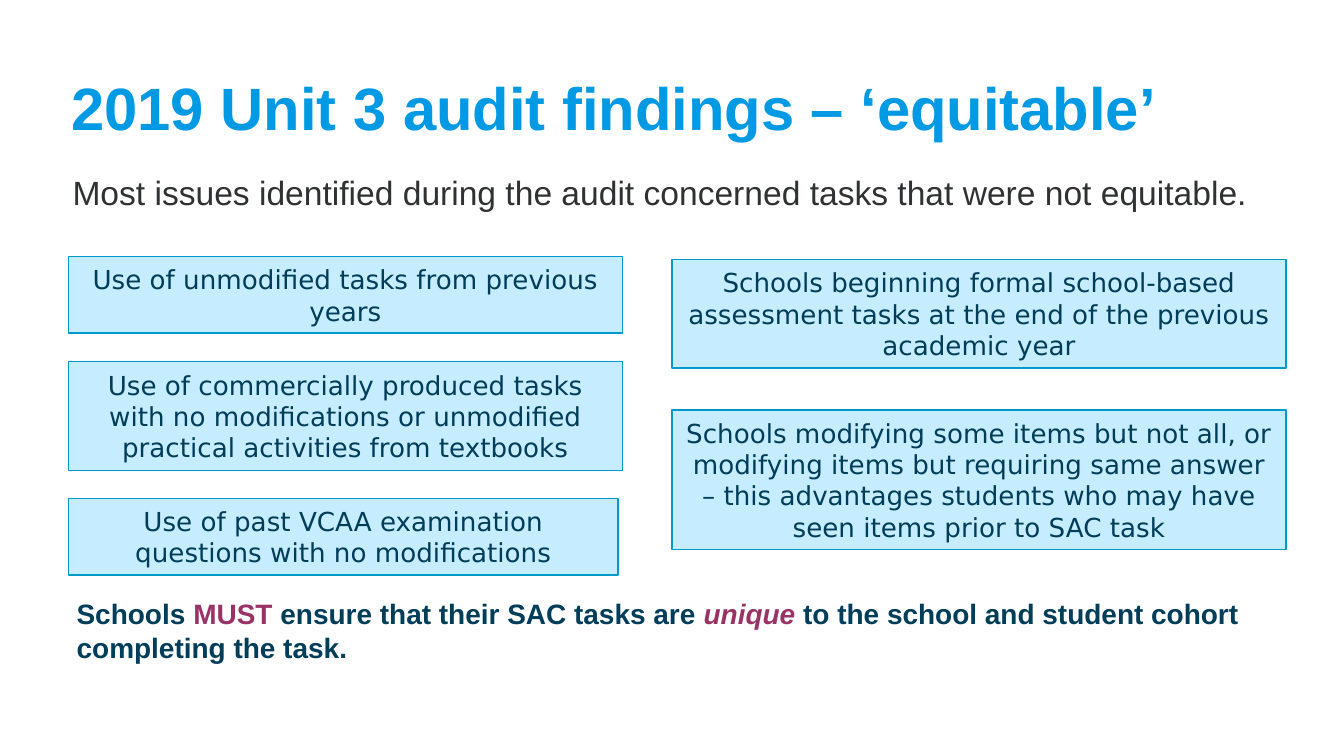
from pptx import Presentation
from pptx.dml.color import RGBColor
from pptx.enum import shapes, text
from pptx.oxml import ns
from pptx.util import Inches, Pt
from lxml import etree

BLUE = RGBColor(0x00, 0x99, 0xE3)
CHARCOAL = RGBColor(0x30, 0x31, 0x32)
NAVY = RGBColor(0x00, 0x3D, 0x59)
PLUM = RGBColor(0x99, 0x33, 0x66)
PALE_BLUE = RGBColor(0xC6, 0xEC, 0xFF)
EDGE_BLUE = RGBColor(0x00, 0x99, 0xCC)

LEFT_CARDS = [
    (2.69, 4.12, 0.81, "Use of commercially produced tasks with no modifications "
                       "or unmodified practical activities from textbooks"),
    (1.91, 4.12, 0.57, "Use of unmodified tasks from previous years"),
    (3.71, 4.09, 0.57, "Use of past VCAA examination questions with no modifications"),
]
RIGHT_CARDS = [
    (1.93, 4.57, 0.81, "Schools beginning formal school-based assessment tasks "
                       "at the end of the previous academic year"),
    (3.05, 4.57, 1.04, "Schools modifying some items but not all, or modifying items "
                       "but requiring same answer – this advantages students who may "
                       "have seen items prior to SAC task"),
]
REMINDER = [
    ("Schools ", NAVY, False),
    ("MUST", PLUM, False),
    (" ensure that their SAC tasks are ", NAVY, False),
    ("unique", PLUM, True),
    (" to the school and student cohort completing the task.", NAVY, False),
]


class AuditSlide:
    """Builds the audit findings slide in one consistent style."""

    def __init__(self, deck, layout):
        self.page = deck.slides.add_slide(layout)
        self.heading_font = "Arial"
        self.card_font = "DejaVu Sans"

    def style(self, span, name, size, color, bold=False, italic=False):
        font = span.font
        font.name, font.size = name, Pt(size)
        font.bold, font.italic = bold, italic
        font.color.rgb = color

    def place(self, box, left, top, width, height):
        box.left, box.top = Inches(left), Inches(top)
        box.width, box.height = Inches(width), Inches(height)

    def indent(self, para):
        properties = para._p.get_or_add_pPr()
        properties.set("marL", str(Inches(0.38)))
        properties.set("indent", "0")
        etree.SubElement(properties, ns.qn("a:buNone"))

    def title(self, words):
        box = self.page.shapes.title
        self.place(box, 0.43, 0.32, 9.13, 0.94)
        frame = box.text_frame
        frame.text = words
        frame.vertical_anchor = text.MSO_ANCHOR.MIDDLE
        frame.auto_size = text.MSO_AUTO_SIZE.NONE
        para = frame.paragraphs[0]
        para.alignment = text.PP_ALIGN.LEFT
        self.style(para.runs[0], self.heading_font, 32, BLUE, bold=True)

    def body(self, words):
        box = self.page.placeholders[1]
        self.place(box, 0.06, 1.23, 9.45, 0.57)
        frame = box.text_frame
        frame.text = words
        frame.auto_size = text.MSO_AUTO_SIZE.NONE
        para = frame.paragraphs[0]
        self.indent(para)
        para.space_before = Pt(0)
        self.style(para.runs[0], self.heading_font, 18, CHARCOAL)

    def card(self, left, top, width, height, words):
        box = self.page.shapes.add_shape(
            shapes.MSO_SHAPE.RECTANGLE,
            Inches(left), Inches(top), Inches(width), Inches(height))
        box.shadow.inherit = False
        box.fill.solid()
        box.fill.fore_color.rgb = PALE_BLUE
        box.line.color.rgb = EDGE_BLUE
        box.line.width = Pt(0.75)
        frame = box.text_frame
        frame.text = words
        frame.word_wrap = True
        frame.auto_size = text.MSO_AUTO_SIZE.SHAPE_TO_FIT_TEXT
        para = frame.paragraphs[0]
        para.alignment = text.PP_ALIGN.CENTER
        self.style(para.runs[0], self.card_font, 14, NAVY)

    def reminder(self, pieces):
        box = self.page.shapes.add_textbox(
            Inches(0.12), Inches(4.4), Inches(9.45), Inches(0.73))
        frame = box.text_frame
        frame.word_wrap = True
        frame.margin_left = frame.margin_right = Inches(0.07)
        frame.margin_top = frame.margin_bottom = Inches(0.04)
        para = frame.paragraphs[0]
        self.indent(para)
        for words, color, italic in pieces:
            span = para.add_run()
            span.text = words
            self.style(span, self.heading_font, 15, color, True, italic)


def main():
    deck = Presentation()
    deck.slide_width, deck.slide_height = Inches(10), Inches(10 * 9 / 16)
    slide = AuditSlide(deck, deck.slide_layouts[1])
    slide.title("2019 Unit 3 audit findings – ‘equitable’")
    slide.body("Most issues identified during the audit concerned tasks "
               "that were not equitable.")
    for left, cards in ((0.51, LEFT_CARDS), (5, RIGHT_CARDS)):
        for card in cards:
            slide.card(left, *card)
    slide.reminder(REMINDER)
    deck.save("out.pptx")


if __name__ == "__main__":
    main()
